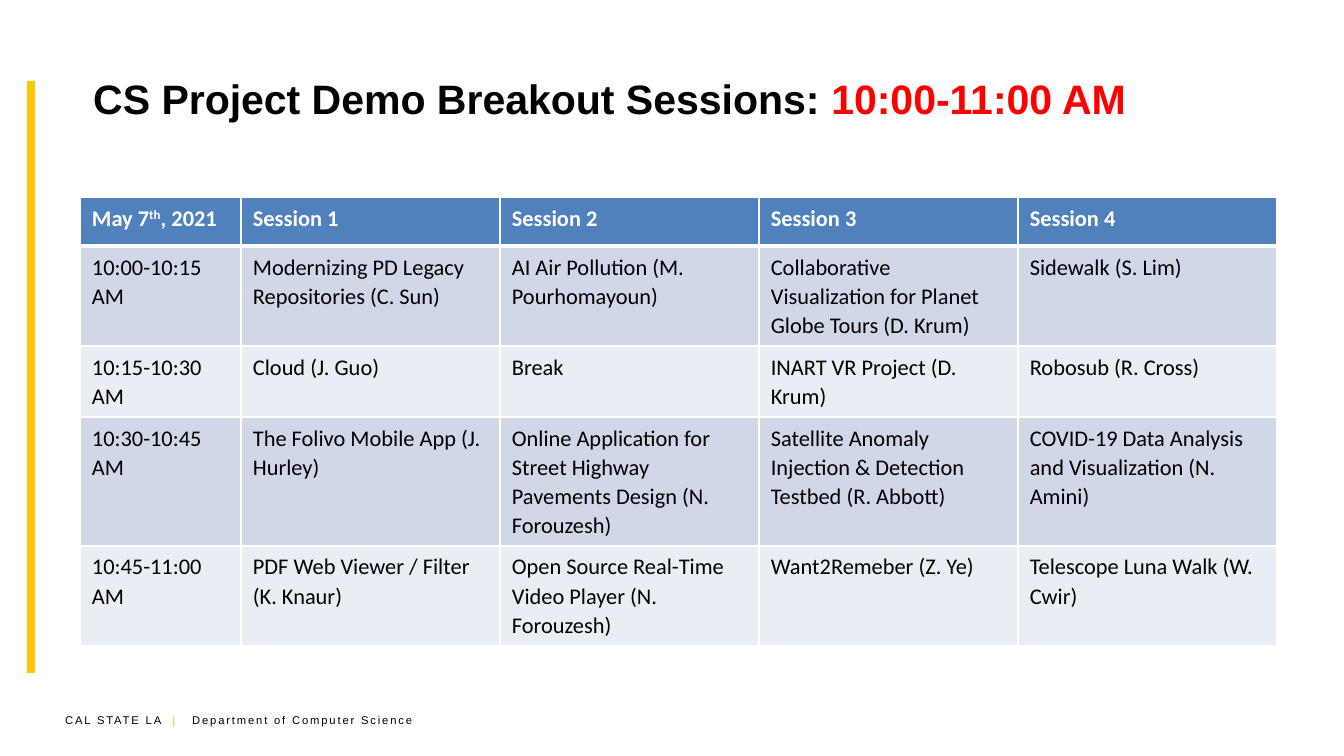
from lxml import etree
from pptx import Presentation
from pptx.dml.color import RGBColor
from pptx.enum import shapes, text
from pptx.oxml import ns
from pptx.util import Pt

PX = 914400 / 134.4
BLACK = RGBColor(0x00, 0x00, 0x00)
WHITE = RGBColor(0xFF, 0xFF, 0xFF)
RED = RGBColor(0xFF, 0x00, 0x00)
GOLD = RGBColor(0xFC, 0xC9, 0x0A)
BLUE = RGBColor(0x4F, 0x81, 0xBD)
BANDS = RGBColor(0xD0, 0xD8, 0xE8), RGBColor(0xE9, 0xED, 0xF4)

TITLE = [("CS Project Demo Breakout Sessions: ", BLACK), ("10:00-11:00 AM", RED)]
FOOTER = [("CAL STATE LA ", BLACK), (" |\t", GOLD),
          ("Department of Computer Science", BLACK)]
DATE = [("May 7", 0), ("th", 30000), (", 2021", 0)]
HEADS = ["Session 1", "Session 2", "Session 3", "Session 4"]
ROWS = [
    ["10:00-10:15 AM", "Modernizing PD Legacy Repositories (C. Sun)",
     "AI Air Pollution (M. Pourhomayoun)",
     "Collaborative Visualization for Planet Globe Tours (D. Krum)",
     "Sidewalk (S. Lim)"],
    ["10:15-10:30 AM", "Cloud (J. Guo)", "Break",
     "INART VR Project (D. Krum)", "Robosub (R. Cross)"],
    ["10:30-10:45 AM", "The Folivo Mobile App (J. Hurley)",
     "Online Application for Street Highway Pavements Design (N. Forouzesh)",
     "Satellite Anomaly Injection & Detection Testbed (R. Abbott)",
     "COVID-19 Data Analysis and Visualization (N. Amini)"],
    ["10:45-11:00 AM", "PDF Web Viewer / Filter (K. Knaur)",
     "Open Source Real-Time Video Player (N. Forouzesh)",
     "Want2Remeber (Z. Ye)", "Telescope Luna Walk (W. Cwir)"],
]
WIDTHS = [161] + [259] * 4
HEIGHTS = [49, 100, 71, 129, 100]


def px(n):
    return round(n * PX)


def area(*nums):
    return [px(n) for n in nums]


def sub(node, tag, **attrs):
    return etree.SubElement(node, ns.qn(tag), **attrs)


def style(para, name, size, color=None, bold=False):
    font = para.font
    font.name, font.size, font.bold = name, Pt(size), bold
    if color is not None:
        font.color.rgb = color


def label(slide, box, parts, size, bold=False, tab=None, gap=0):
    frame = slide.shapes.add_textbox(*area(*box)).text_frame
    frame.word_wrap = True
    frame.vertical_anchor = text.MSO_ANCHOR.MIDDLE
    para = frame.paragraphs[0]
    if tab:
        tabs = sub(para._p.get_or_add_pPr(), "a:tabLst")
        sub(tabs, "a:tab", pos=str(px(tab)), algn="l")
    style(para, "Arial", size, bold=bold)
    for words, color in parts:
        run = para.add_run()
        run.text = words
        run.font.color.rgb = color
        if gap:
            run._r.get_or_add_rPr().set("spc", str(gap))


def border(cell, row):
    props = cell._tc.get_or_add_tcPr()
    thick = {"T": row == 1, "B": row == 0}
    for side in "LRTB":
        width = Pt(3 if thick.get(side) else 1)
        line = sub(props, "a:ln" + side, w=str(width))
        sub(sub(line, "a:solidFill"), "a:srgbClr", val=str(WHITE))


def fill(cell, row, parts):
    border(cell, row)
    cell.fill.solid()
    cell.fill.fore_color.rgb = BANDS[(row - 1) % 2] if row else BLUE
    cell.margin_left = cell.margin_right = px(12)
    cell.margin_top = cell.margin_bottom = px(6)
    para = cell.text_frame.paragraphs[0]
    para.line_spacing = 1.07
    para.space_after = Pt(8)
    style(para, "Calibri", 12, BLACK if row else WHITE, row == 0)
    for words, base in parts:
        run = para.add_run()
        run.text = words
        if base:
            run._r.get_or_add_rPr().set("baseline", str(base))


def main():
    prs = Presentation()
    prs.slide_width, prs.slide_height = area(1344, 756)
    slide = prs.slides.add_slide(prs.slide_layouts[6])

    label(slide, (52, 707, 392, 27), FOOTER, 6, tab=127, gap=100)
    bar = slide.shapes.add_shape(shapes.MSO_SHAPE.RECTANGLE, *area(27, 81, 8, 592))
    bar.shadow.inherit = False
    bar.fill.solid()
    bar.fill.fore_color.rgb = GOLD
    bar.line.fill.background()
    label(slide, (80, 35, 1196, 126), TITLE, 22, bold=True)

    box = area(80, 197, sum(WIDTHS), sum(HEIGHTS))
    table = slide.shapes.add_table(len(HEIGHTS), len(WIDTHS), *box).table
    for col, width in zip(table.columns, WIDTHS):
        col.width = px(width)
    for row, height in zip(table.rows, HEIGHTS):
        row.height = px(height)
    plain = [[[(words, 0)] for words in row] for row in [HEADS] + ROWS]
    plain[0].insert(0, DATE)
    for r, row in enumerate(plain):
        for c, parts in enumerate(row):
            fill(table.cell(r, c), r, parts)

    prs.save("out.pptx")


if __name__ == "__main__":
    main()
